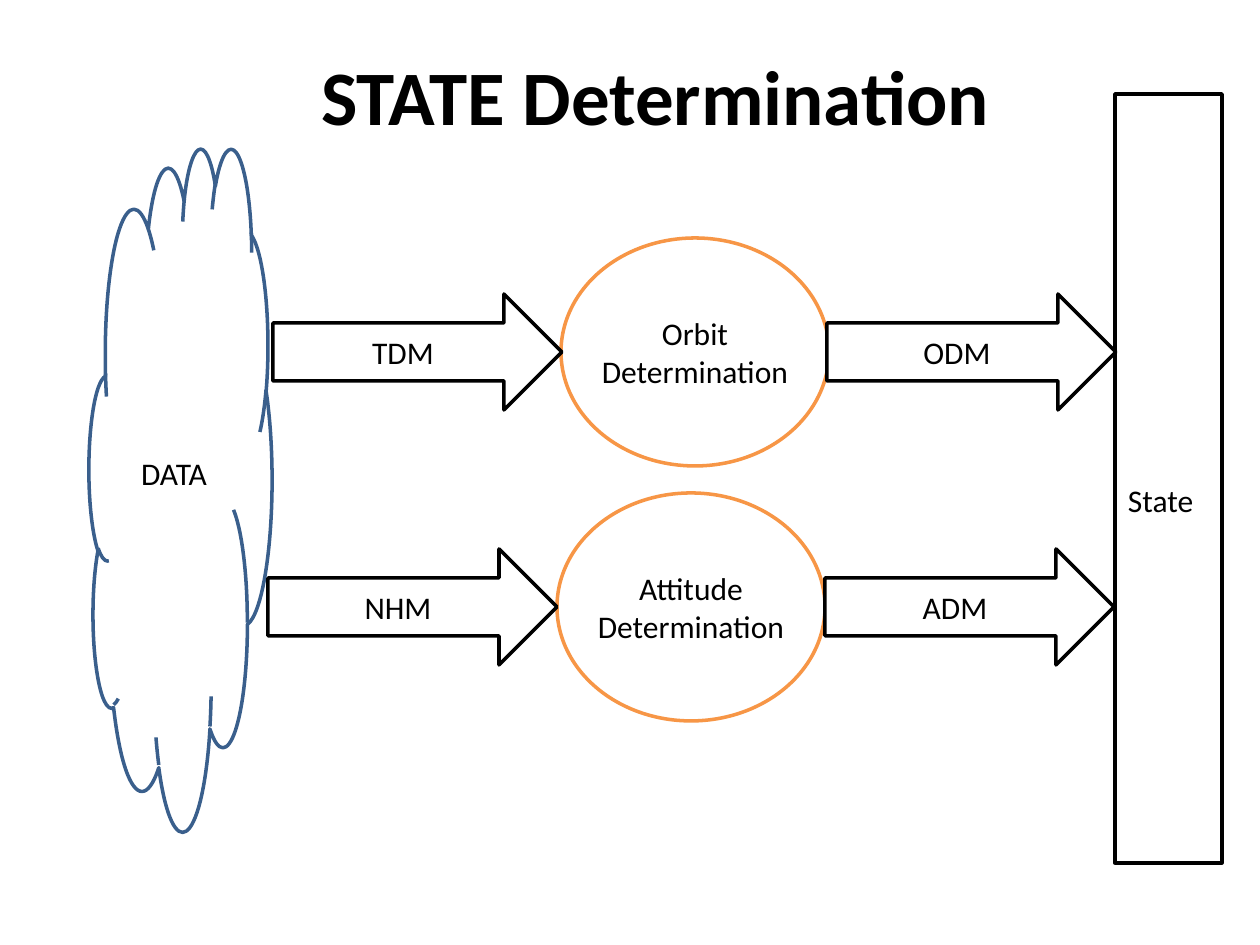
"""Build the STATE Determination slide: data flows through two processes to the state."""
import pptx
import pptx.dml.color
import pptx.enum.shapes
import pptx.enum.text
import pptx.util

BLACK = pptx.dml.color.RGBColor(0x00, 0x00, 0x00)
WHITE = pptx.dml.color.RGBColor(0xFF, 0xFF, 0xFF)
BLUE = pptx.dml.color.RGBColor(0x3A, 0x5F, 0x8C)
ORANGE = pptx.dml.color.RGBColor(0xF7, 0x96, 0x46)
EMU_PER_PX = 914400 / 126
PRESET = pptx.enum.shapes.MSO_SHAPE
ALIGN = pptx.enum.text.PP_ALIGN


def write_text(shape, text, size=18, bold=False, align=ALIGN.CENTER, margins=(13, 6, 13, 6)):
    frame = shape.text_frame
    frame.word_wrap = True
    frame.auto_size = pptx.enum.text.MSO_AUTO_SIZE.NONE
    frame.vertical_anchor = pptx.enum.text.MSO_ANCHOR.MIDDLE
    frame.margin_left, frame.margin_top, frame.margin_right, frame.margin_bottom = (
        round(margin * EMU_PER_PX) for margin in margins
    )
    paragraph = frame.paragraphs[0]
    paragraph.alignment = align
    run = paragraph.add_run()
    run.text = text
    run.font.name = "Calibri"
    run.font.size = pptx.util.Pt(size)
    run.font.bold = bold
    run.font.color.rgb = BLACK


def add_outlined(slide, preset, box, line_color, fill_color=None):
    shape = slide.shapes.add_shape(preset, *(round(length * EMU_PER_PX) for length in box))
    shape.shadow.inherit = False
    shape.line.color.rgb = line_color
    shape.line.width = pptx.util.Pt(2)
    if fill_color is None:
        shape.fill.background()
    else:
        shape.fill.solid()
        shape.fill.fore_color.rgb = fill_color
    return shape


presentation = pptx.Presentation()
presentation.slide_width = round(1260 * EMU_PER_PX)
presentation.slide_height = round(945 * EMU_PER_PX)
slide = presentation.slides.add_slide(presentation.slide_layouts[5])

title = slide.shapes.title
title.left, title.top, title.width, title.height = (
    round(length * EMU_PER_PX) for length in (293, 42, 725, 106)
)
write_text(title, "STATE Determination", size=44, bold=True)

data_cloud = add_outlined(slide, PRESET.CLOUD, (89, 147, 183, 683), BLUE, WHITE)
write_text(data_cloud, "DATA")

flows = [
    (352, (273, "TDM"), (561, "Orbit Determination"), (827, "ODM")),
    (607, (268, "NHM"), (557, "Attitude Determination"), (825, "ADM")),
]
for middle, source, process, result in flows:
    process_left, process_name = process
    ellipse_box = (process_left, middle - 114, 268, 228)
    ellipse = add_outlined(slide, PRESET.OVAL, ellipse_box, ORANGE)
    write_text(ellipse, process_name, margins=(0, 0, 0, 0))
    for arrow_left, message in (source, result):
        arrow_box = (arrow_left, middle - 58, 289, 116)
        arrow = add_outlined(slide, PRESET.RIGHT_ARROW, arrow_box, BLACK, WHITE)
        write_text(arrow, message)

state_bar = add_outlined(slide, PRESET.RECTANGLE, (1115, 94, 107, 769), BLACK)
write_text(state_bar, "State", align=ALIGN.LEFT, margins=(13, 48, 13, 6))

presentation.save("out.pptx")
